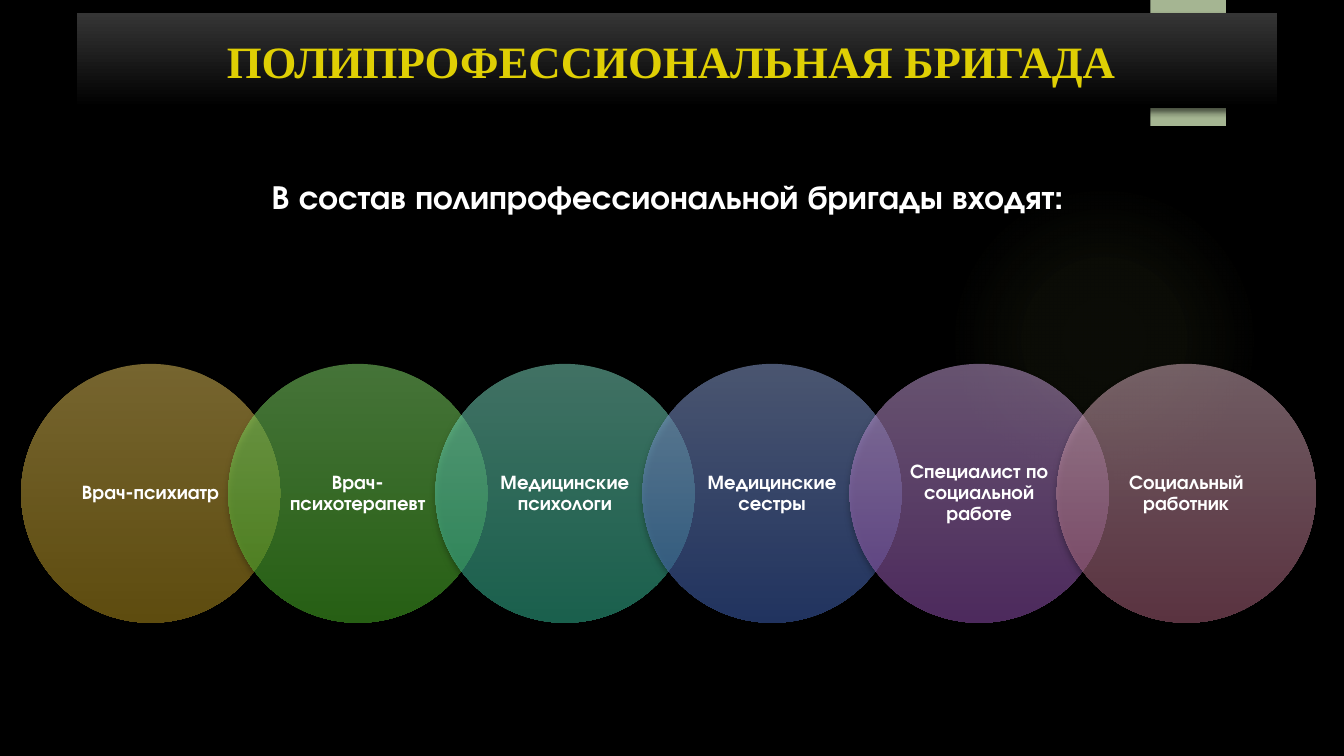
import pptx
import pptx.util
import pptx.dml.color
import pptx.enum.shapes
import pptx.enum.text
import pptx.oxml
import pptx.oxml.ns
from lxml import etree

Inches = pptx.util.Inches
Pt = pptx.util.Pt
SHAPES = pptx.enum.shapes.MSO_SHAPE
NAMESPACE = pptx.oxml.ns.nsdecls("a")

COLORS = {
    "background": "000000",
    "shadow": "000000",
    "glow": "9EB160",
    "tab": "A5B592",
    "title_top": "353535",
    "title_bottom": "000000",
    "title_text": "DFCF04",
    "text": "FFFFFF",
}
FONT = "TeX Gyre Adventor"
TITLE_FONT = "Times New Roman"
OVERLAP = 0.2

TEAM = [
    ("Врач-психиатр", "ECCA5F", "BC981E"),
    ("Врач-психотерапевт", "8BE770", "4EBF29"),
    ("Медицинские психологи", "82E3C8", "34C09A"),
    ("Медицинские сестры", "95ABE0", "4267BF"),
    ("Специалист по социальной работе", "CEA7E0", "9A55BA"),
    ("Социальный работник", "E0B8C6", "B56781"),
]
LINEAR = '<a:lin ang="5400000" scaled="0"/>'
RADIAL = '<a:path path="circle"><a:fillToRect l="50000" t="50000" r="50000" b="50000"/></a:path>'


def rgb(color):
    return pptx.dml.color.RGBColor.from_string(color)


def color_xml(color, opacity):
    return f'<a:srgbClr val="{color}"><a:alpha val="{opacity * 1000}"/></a:srgbClr>'


def set_gradient(shape, stops, direction=LINEAR):
    shape.fill.background()
    stop_xml = "".join(
        f'<a:gs pos="{position * 1000}">{color_xml(color, opacity)}</a:gs>'
        for position, color, opacity in stops
    )
    gradient = pptx.oxml.parse_xml(
        f'<a:gradFill {NAMESPACE} rotWithShape="1"><a:gsLst>{stop_xml}</a:gsLst>{direction}</a:gradFill>'
    )
    properties = shape.element.spPr
    properties.replace(properties.find(pptx.oxml.ns.qn("a:noFill")), gradient)


def set_shadow(shape, opacity=60, blur=5, distance=3):
    shape.shadow.inherit = False
    effects = shape.element.spPr.find(pptx.oxml.ns.qn("a:effectLst"))
    effects.append(pptx.oxml.parse_xml(
        f'<a:outerShdw {NAMESPACE} blurRad="{Pt(blur)}" dist="{Pt(distance)}" dir="5400000" '
        f'algn="ctr" rotWithShape="0">{color_xml(COLORS["shadow"], opacity)}</a:outerShdw>'
    ))


def add_plain_shape(slide, kind, left, top, width, height):
    shape = slide.shapes.add_shape(kind, Inches(left), Inches(top), Inches(width), Inches(height))
    shape.line.fill.background()
    shape.shadow.inherit = False
    return shape


def write_text(shape, text, size, font=FONT, color="text", spacing=0.9, margins=(0, 0)):
    frame = shape.text_frame
    frame.word_wrap = True
    frame.auto_size = pptx.enum.text.MSO_AUTO_SIZE.NONE
    frame.vertical_anchor = pptx.enum.text.MSO_ANCHOR.MIDDLE
    frame.margin_left = frame.margin_right = Inches(margins[0])
    frame.margin_top = frame.margin_bottom = Inches(margins[1])
    frame.text = text
    paragraph = frame.paragraphs[0]
    paragraph.alignment = pptx.enum.text.PP_ALIGN.CENTER
    paragraph.line_spacing = spacing
    paragraph.font.name = font
    paragraph.font.size = Pt(size)
    paragraph.font.bold = True
    paragraph.font.color.rgb = rgb(COLORS[color])


def add_decorations(slide):
    glow = add_plain_shape(slide, SHAPES.OVAL, 9.41, 1.83, 3.08, 3.08)
    set_gradient(glow, [(position, COLORS["glow"], opacity)
                        for position, opacity in ((0, 7), (36, 6), (69, 0))], RADIAL)
    tab = add_plain_shape(slide, SHAPES.RECTANGLE, 11.41, 0, 0.75, 1.25)
    tab.fill.solid()
    tab.fill.fore_color.rgb = rgb(COLORS["tab"])
    set_shadow(tab, opacity=45, blur=3, distance=2)


def place_title(slide, left, top, width, height):
    title = slide.shapes.title
    slide.shapes.element.append(title.element)
    title.left, title.top = Inches(left), Inches(top)
    title.width, title.height = Inches(width), Inches(height)
    set_gradient(title, [(0, COLORS["title_top"], 100), (100, COLORS["title_bottom"], 100)])
    set_shadow(title)
    write_text(title, "ПОЛИПРОФЕССИОНАЛЬНАЯ БРИГАДА ", 32, TITLE_FONT, "title_text", 1, (0.1, 0.05))


def add_team(slide, left, top, width):
    diameter = width / (1 + (len(TEAM) - 1) * (1 - OVERLAP))
    pitch = diameter * (1 - OVERLAP)
    for index, (role, light, dark) in enumerate(TEAM):
        circle = add_plain_shape(slide, SHAPES.OVAL, left + index * pitch, top, diameter, diameter)
        set_gradient(circle, [(0, light, 50), (100, dark, 50)])
        set_shadow(circle)
        write_text(circle, role, 14, margins=(0.14, 0.02))


def add_lead(slide, left, top, width, height):
    lead = slide.shapes.add_textbox(Inches(left), Inches(top), Inches(width), Inches(height))
    write_text(lead, "В состав полипрофессиональной бригады входят:", 24)


def main():
    presentation = pptx.Presentation()
    presentation.slide_width = Inches(13.33)
    presentation.slide_height = Inches(7.5)
    slide = presentation.slides.add_slide(presentation.slide_layouts[5])
    slide.background.fill.solid()
    slide.background.fill.fore_color.rgb = rgb(COLORS["background"])
    add_decorations(slide)
    place_title(slide, 0.76, 0.13, 11.91, 0.94)
    add_team(slide, 0.21, 3.61, 12.84)
    add_lead(slide, 1.76, 1.57, 9.73, 0.79)
    presentation.save("out.pptx")


if __name__ == "__main__":
    main()
